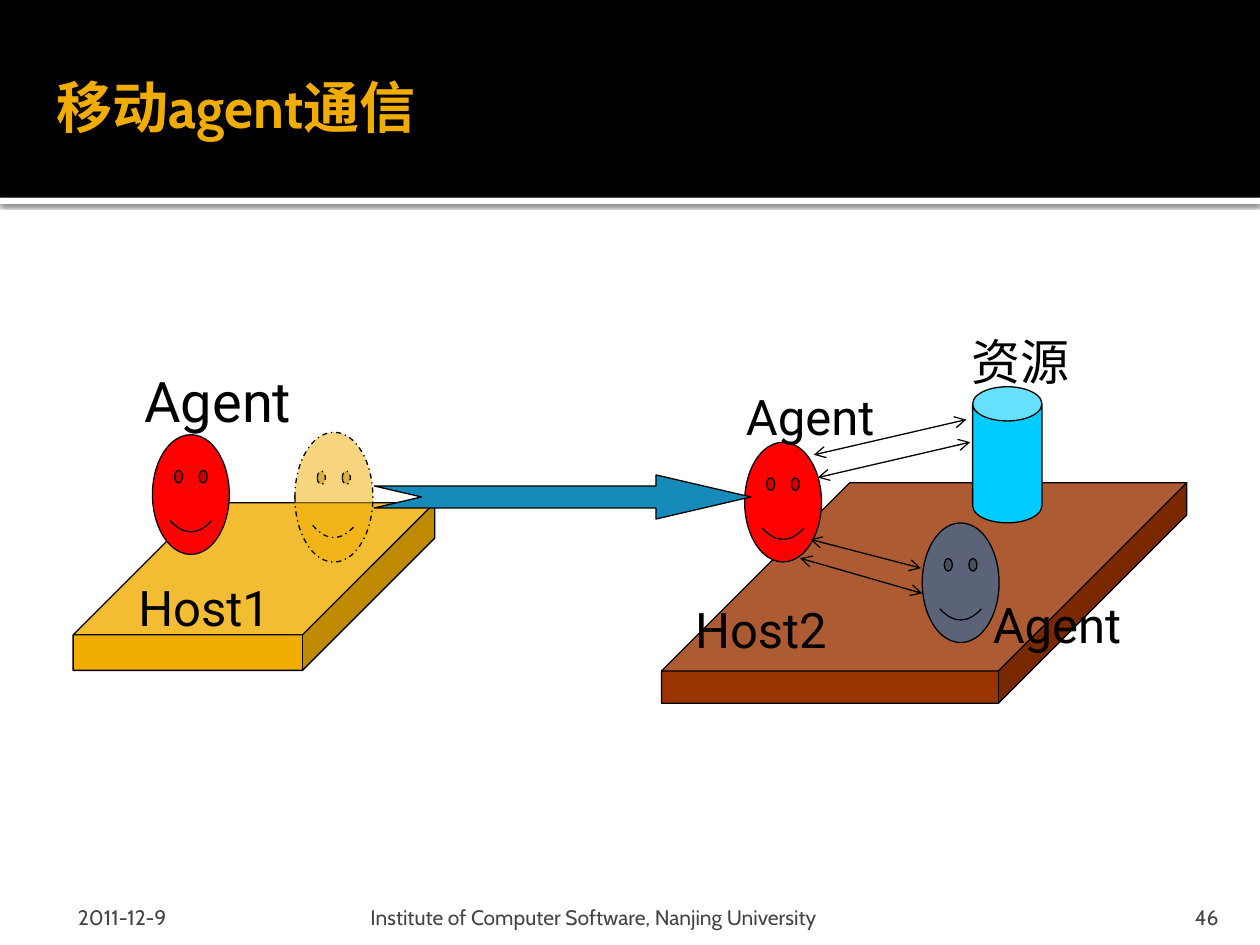
from dataclasses import dataclass

from lxml import etree
from pptx import Presentation, util as u
from pptx.dml.color import RGBColor
from pptx.enum import dml, shapes, text
from pptx.oxml import ns

SHAPE = shapes.MSO_SHAPE
ALIGN = text.PP_ALIGN
ANCHOR = text.MSO_ANCHOR
SMILE = (0.047,)
LINE_WIDTH = 0.75


@dataclass
class Box:
    left: float
    top: float
    width: float
    height: float

    def lengths(self) -> list:
        return [u.Pt(v) for v in (self.left, self.top, self.width, self.height)]


@dataclass
class Figure:
    kind: SHAPE
    box: Box
    fill: str
    adjustments: tuple = ()
    ghost: bool = False


@dataclass
class Label:
    words: str
    box: Box
    size: float = 28
    font: str = "Roboto"
    color: str = "000000"
    align: ALIGN = ALIGN.CENTER
    anchor: ANCHOR = ANCHOR.TOP
    insets: tuple = (7.2, 3.6, 7.2, 3.6)
    bold: bool = False


def rgb(color: str) -> RGBColor:
    return RGBColor.from_string(color)


def add_child(parent, tag: str, **attributes):
    return etree.SubElement(parent, ns.qn(tag), attributes)


def draw_band(slide, box: Box, color: str):
    band = slide.shapes.add_shape(SHAPE.RECTANGLE, *box.lengths())
    band.shadow.inherit = False
    band.fill.solid()
    band.fill.fore_color.rgb = rgb(color)
    band.line.fill.background()
    return band


def add_shadow(shape) -> None:
    effects = shape._element.spPr.find(ns.qn("a:effectLst"))
    shadow = add_child(effects, "a:outerShdw", blurRad=str(u.Pt(2.5)),
                       dist=str(u.Pt(0.8)), dir="5400000", rotWithShape="0")
    color = add_child(shadow, "a:srgbClr", val="000000")
    add_child(color, "a:alpha", val="60000")


def draw_figure(slide, figure: Figure) -> None:
    shape = slide.shapes.add_shape(figure.kind, *figure.box.lengths())
    for index, value in enumerate(figure.adjustments):
        shape.adjustments[index] = value
    shape.shadow.inherit = False
    shape.fill.solid()
    shape.fill.fore_color.rgb = rgb(figure.fill)
    shape.line.color.rgb = rgb("000000")
    shape.line.width = u.Pt(LINE_WIDTH)
    if figure.ghost:
        shape.line.dash_style = dml.MSO_LINE.DASH_DOT
        color = shape._element.spPr.find(ns.qn("a:solidFill"))[0]
        add_child(color, "a:alpha", val="50000")


def draw_exchange(slide, ends: tuple) -> None:
    """Draw a line with an arrowhead at both ends."""
    connector = slide.shapes.add_connector(
        shapes.MSO_CONNECTOR.STRAIGHT, *[u.Pt(v) for v in ends])
    connector.line.color.rgb = rgb("000000")
    connector.line.width = u.Pt(LINE_WIDTH)
    line = connector.line._get_or_add_ln()
    for tag in ("a:headEnd", "a:tailEnd"):
        add_child(line, tag, type="arrow")
    add_child(connector._element.spPr, "a:effectLst")


def write_label(shape, label: Label) -> None:
    frame = shape.text_frame
    frame.text = label.words
    frame.word_wrap = True
    frame.auto_size = text.MSO_AUTO_SIZE.NONE
    frame.vertical_anchor = label.anchor
    (frame.margin_left, frame.margin_top, frame.margin_right,
     frame.margin_bottom) = [u.Pt(v) for v in label.insets]
    paragraph = frame.paragraphs[0]
    paragraph.alignment = label.align
    font = paragraph.runs[0].font
    font.name, font.size, font.bold = label.font, u.Pt(label.size), label.bold
    font.color.rgb = rgb(label.color)


def draw_label(slide, label: Label) -> None:
    write_label(slide.shapes.add_textbox(*label.box.lengths()), label)


def diagram_label(words: str, left: float, top: float, size: float = 28) -> Label:
    return Label(words, Box(left, top, 103.7, 59), size)


def footer_label(words: str, left: float, width: float, align: ALIGN,
                 insets: tuple) -> Label:
    return Label(words, Box(left, 509.8, width, 21.6), 12, "Cabin", "454545",
                 align, ANCHOR.BOTTOM, insets)


def agent(left: float, top: float, fill: str) -> Figure:
    return Figure(SHAPE.SMILEY_FACE, Box(left, top, 43.9, 68.4), fill, SMILE)


TITLE = Label("移动agent通信", Box(25.2, 4.3, 680.4, 113), 32, "Cabin", "F0AD00",
              ALIGN.LEFT, ANCHOR.MIDDLE, (7.2, 3.6, 3.6, 3.6), True)

FIGURES = [
    Figure(SHAPE.CUBE, Box(41.8, 287.3, 206.6, 95.8), "F0AD00", (0.788,)),
    agent(87.1, 248.4, "FF0000"),
    Figure(SHAPE.SMILEY_FACE, Box(168.5, 247, 44.6, 74.2), "F0AD00", SMILE, True),
    Figure(SHAPE.CUBE, Box(378, 275.8, 300.2, 126), "993300", (0.854,)),
    agent(425.5, 252.7, "FF0000"),
    Figure(SHAPE.CAN, Box(555.8, 221, 39.6, 77.8), "00CCFF", (0.494,)),
    agent(527, 298.8, "5A6378"),
    Figure(SHAPE.NOTCHED_RIGHT_ARROW, Box(213.8, 271.4, 215.3, 25.2), "168BBA",
           (0.5, 2.152)),
]

EXCHANGES = [
    (467.3, 272.9, 554.4, 252.7),
    (465.1, 259.9, 552.2, 239.8),
    (463, 308.2, 526.3, 324.7),
    (457.2, 319, 527, 339.1),
]

LABELS = [
    diagram_label("Host1", 64.8, 326.2),
    diagram_label("Host2", 383, 339.1),
    diagram_label("Agent", 72.7, 205.9, 32),
    diagram_label("Agent", 411.1, 217.4),
    diagram_label("资源", 531.4, 185.8),
    diagram_label("Agent", 552.2, 336.2),
    footer_label("2011-12-9", 36, 167.8, ALIGN.LEFT, (8.6, 3.6, 3.6, 0)),
    footer_label("46", 645.8, 57.6, ALIGN.RIGHT, (7.2, 3.6, 7.2, 0)),
    footer_label("Institute of Computer Software, Nanjing University",
                 208.1, 433.4, ALIGN.LEFT, (3.6, 3.6, 3.6, 0)),
]


def main() -> None:
    presentation = Presentation()
    presentation.slide_width, presentation.slide_height = u.Pt(720), u.Pt(540)
    slide = presentation.slides.add_slide(presentation.slide_layouts[5])
    slide.background.fill.solid()
    slide.background.fill.fore_color.rgb = rgb("FFFFFF")

    # Header bands, with the title raised above them
    add_shadow(draw_band(slide, Box(0, 113, 720, 3.6), "FFFFFF"))
    draw_band(slide, Box(0, 0, 720, 113), "000000")
    title = slide.shapes.title
    title.left, title.top, title.width, title.height = TITLE.box.lengths()
    write_label(title, TITLE)
    slide.shapes._spTree.append(title._element)

    # Hosts, agents and resource
    for figure in FIGURES:
        draw_figure(slide, figure)

    # Communication between agents and resource
    for ends in EXCHANGES:
        draw_exchange(slide, ends)

    # Diagram labels and footer
    for label in LABELS:
        draw_label(slide, label)

    presentation.save("out.pptx")


if __name__ == "__main__":
    main()
